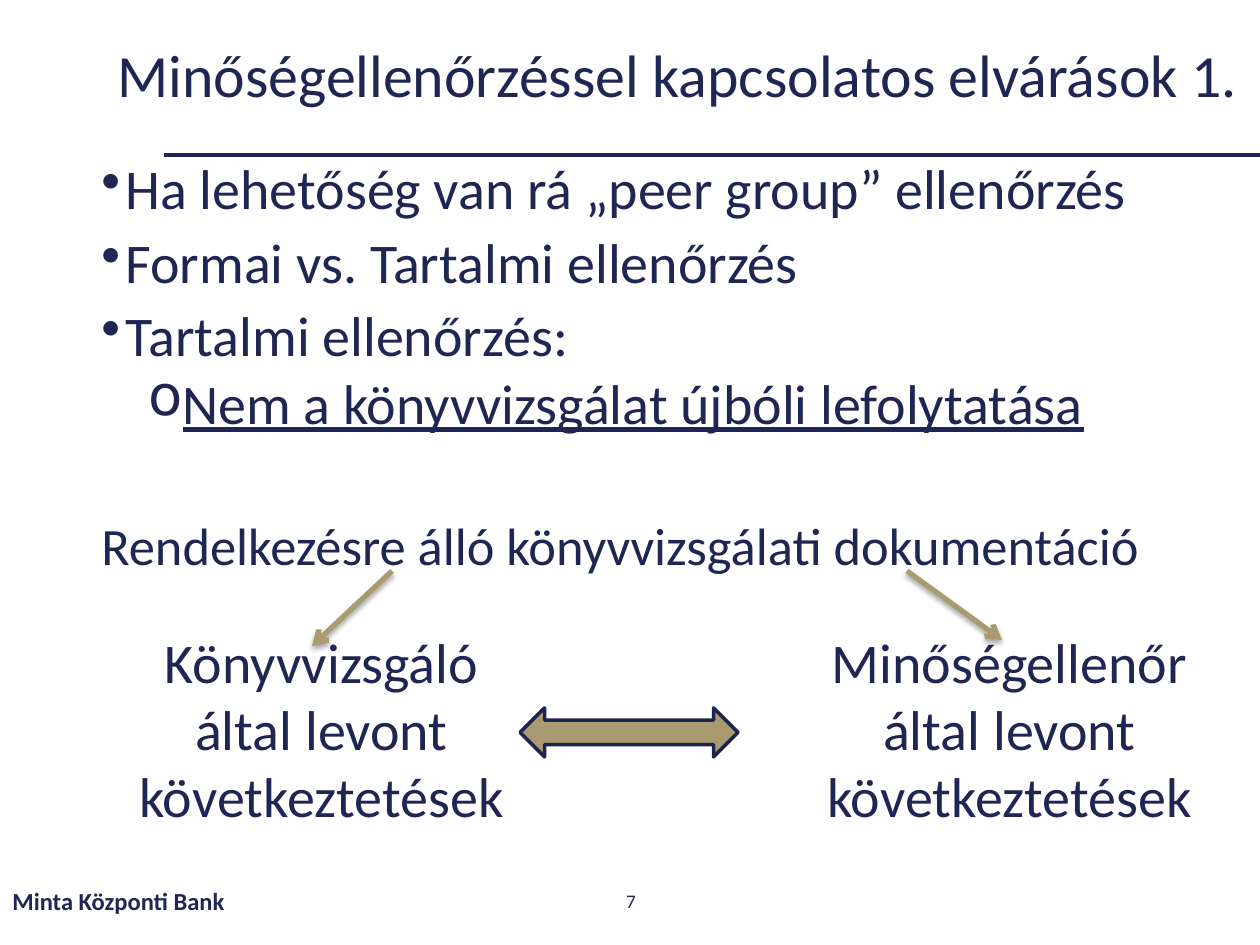
import pptx
import pptx.util
import pptx.dml.color
import pptx.oxml
import pptx.oxml.ns
import pptx.enum.shapes
import pptx.enum.text

SCALE = 914400 / 126
INK = "202653"
NAVY = "1E2452"
GOLD = "A99A6F"
SPACE = pptx.oxml.ns.nsdecls("a")
MID = pptx.enum.text.PP_ALIGN.CENTER


def px(size):
    return pptx.util.Emu(round(size * SCALE))


def color(code):
    return pptx.dml.color.RGBColor.from_string(code)


def add_xml(parent, text):
    parent.append(pptx.oxml.parse_xml(text))


def set_text(para, text, size, bold=False, under=False, align=None,
             left=0, hang=0, mark=None, line=None, gap=None):
    props = para._p.get_or_add_pPr()
    props.set("marL", str(px(left)))
    props.set("indent", str(px(-hang)))
    if mark:
        add_xml(props, f'<a:buChar {SPACE} char="{mark}"/>')
    para.alignment = align
    para.line_spacing = line
    if gap is not None:
        para.space_before = pptx.util.Pt(gap)
    para.text = text
    font = para.font
    font.name = "Calibri"
    font.size = pptx.util.Pt(size)
    font.bold = bold
    font.underline = under
    font.color.rgb = color(INK)


def add_box(slide, x, y, w, h, items, middle=False):
    box = slide.shapes.add_textbox(px(x), px(y), px(w), px(h))
    frame = box.text_frame
    frame.word_wrap = True
    if middle:
        frame.vertical_anchor = pptx.enum.text.MSO_ANCHOR.MIDDLE
    for index, (text, size, style) in enumerate(items):
        para = frame.add_paragraph() if index else frame.paragraphs[0]
        set_text(para, text, size, **style)


def add_line(slide, x1, y1, x2, y2, code, width, arrow=False):
    kind = pptx.enum.shapes.MSO_CONNECTOR.STRAIGHT
    line = slide.shapes.add_connector(kind, px(x1), px(y1), px(x2), px(y2))
    line.line.color.rgb = color(code)
    line.line.width = pptx.util.Pt(width)
    shade = ""
    if arrow:
        add_xml(line.line._get_or_add_ln(), f'<a:tailEnd {SPACE} type="arrow"/>')
        shade = (
            '<a:outerShdw blurRad="39370" dist="22860" dir="5400000" rotWithShape="0">'
            '<a:srgbClr val="000000"><a:alpha val="35000"/></a:srgbClr></a:outerShdw>'
        )
    add_xml(line._element.spPr, f"<a:effectLst {SPACE}>{shade}</a:effectLst>")


def add_arrow(slide, x, y, w, h):
    kind = pptx.enum.shapes.MSO_SHAPE.LEFT_RIGHT_ARROW
    arrow = slide.shapes.add_shape(kind, px(x), px(y), px(w), px(h))
    arrow.shadow.inherit = False
    arrow.fill.solid()
    arrow.fill.fore_color.rgb = color(GOLD)
    arrow.line.color.rgb = color(NAVY)
    arrow.line.width = pptx.util.Pt(2)


def main():
    deck = pptx.Presentation()
    deck.slide_width, deck.slide_height = px(1260), px(945)
    slide = deck.slides.add_slide(deck.slide_layouts[6])

    add_line(slide, 164, 155, 1260, 155, NAVY, 2.25)
    title = "Minőségellenőrzéssel kapcsolatos elvárások 1."
    add_box(slide, 105, 26, 1157, 105, [(title, 34.2, dict(line=0.9))], True)

    first = dict(left=24, hang=24, mark="•", line=0.9)
    point = dict(first, gap=7.5)
    sub = dict(left=71, hang=24, mark="o", line=0.9, gap=3.8, under=True)
    add_box(slide, 89, 155, 1086, 704, [
        ("Ha lehetőség van rá „peer group” ellenőrzés", 32, first),
        ("Formai vs. Tartalmi ellenőrzés", 32, point),
        ("Tartalmi ellenőrzés:", 32, point),
        ("Nem a könyvvizsgálat újbóli lefolytatása", 32, sub),
        ("Rendelkezésre álló könyvvizsgálati dokumentáció", 30,
         dict(line=0.9, gap=48)),
    ])

    add_box(slide, 0, 876, 426, 50,
            [("Minta Központi Bank", 14, dict(bold=True))], True)
    add_box(slide, 489, 876, 284, 50, [("7", 11, dict(align=MID))], True)

    for x, who in ((42, "Könyvvizsgáló"), (730, "Minőségellenőr")):
        add_box(slide, x, 621, 496, 217, [
            (f"{who} által levont következtetések", 32,
             dict(align=MID, left=63)),
        ])

    add_line(slide, 907, 571, 1002, 640, GOLD, 3, True)
    add_line(slide, 392, 571, 312, 646, GOLD, 3, True)
    add_arrow(slide, 520, 708, 218, 49)
    deck.save("out.pptx")


if __name__ == "__main__":
    main()
